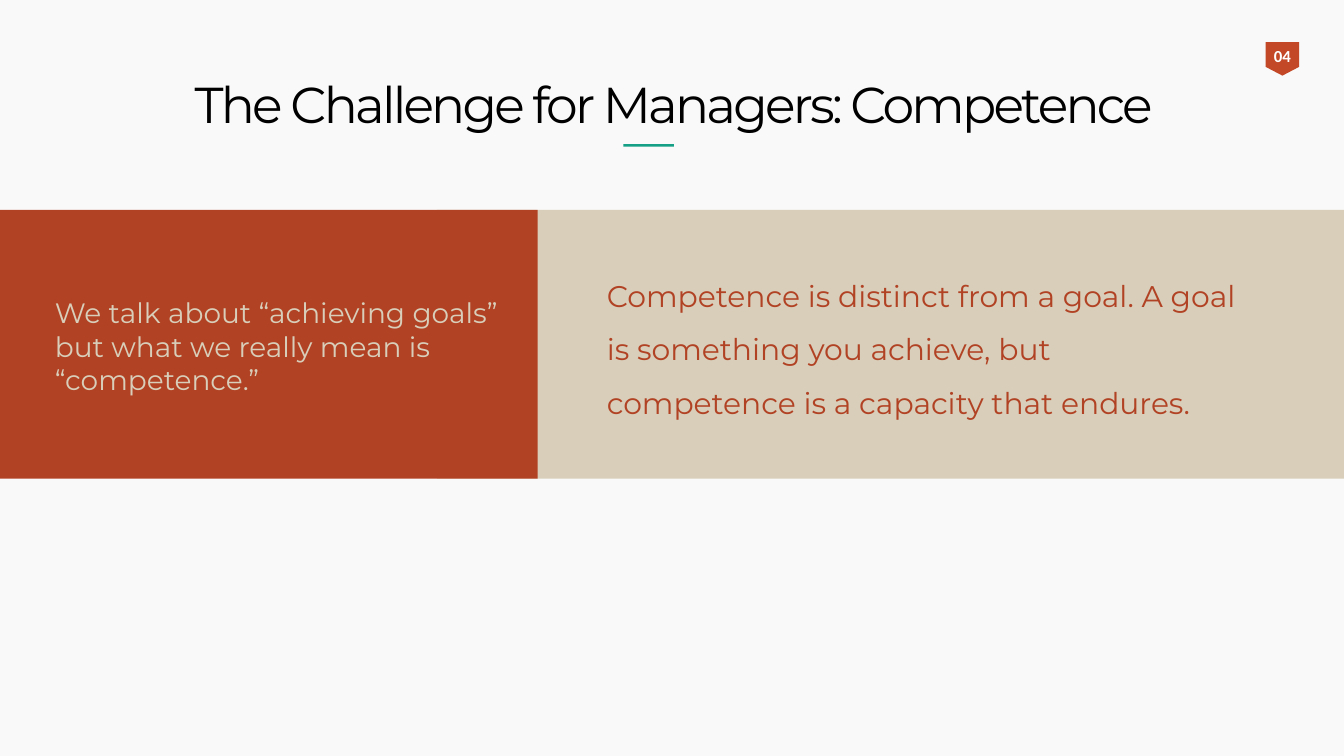
from pptx import Presentation
from pptx.dml.color import RGBColor
from pptx.enum.shapes import MSO_SHAPE
from pptx.enum.text import MSO_ANCHOR, PP_ALIGN
from pptx.util import Pt

COLORS = {
    "background": "F9F9F9",
    "sand": "D8CEB9",
    "rust": "B24224",
    "badge": "C24827",
    "teal": "16A085",
    "black": "000000",
    "white": "FFFFFF",
}


class SlideBuilder:
    """Holds the text style and the slide being filled; lengths are in points."""

    font = "Montserrat"

    def __init__(self, prs):
        self.s = prs.slides.add_slide(prs.slide_layouts[6])
        fill = self.s.background.fill
        fill.solid()
        fill.fore_color.rgb = self.color("background")

    def color(self, name):
        return RGBColor.from_string(COLORS[name])

    def shape(self, kind, left, top, width, height, color):
        sp = self.s.shapes.add_shape(kind, Pt(left), Pt(top), Pt(width), Pt(height))
        sp.shadow.inherit = False
        sp.fill.solid()
        sp.fill.fore_color.rgb = self.color(color)
        sp.line.fill.background()
        return sp

    def pentagon(self, left, top, width, height, color, point, rotation=0):
        """Add a pentagon whose tip takes the share `point` of its short side."""
        sp = self.shape(MSO_SHAPE.PENTAGON, left, top, width, height, color)
        sp.adjustments[0] = point
        sp.rotation = rotation

    def text(self, text, left, top, width, height, size, color, font=None,
             bold=False, align=PP_ALIGN.LEFT, anchor=MSO_ANCHOR.TOP,
             line_spacing=1, tracking=0, wrap=True):
        """Add a one-paragraph text box; tracking is in points."""
        sp = self.s.shapes.add_textbox(Pt(left), Pt(top), Pt(width), Pt(height))
        tf = sp.text_frame
        tf.word_wrap = wrap
        tf.vertical_anchor = anchor
        p = tf.paragraphs[0]
        p.alignment = align
        p.line_spacing = line_spacing
        r = p.add_run()
        r.text = text
        p.font.name = font or self.font
        p.font.size = Pt(size)
        p.font.bold = bold
        p.font.color.rgb = self.color(color)
        if tracking:
            r.font._element.set("spc", str(round(tracking * 100)))


def main():
    prs = Presentation()
    prs.slide_width, prs.slide_height = Pt(720), Pt(405)
    slide = SlideBuilder(prs)

    band_top, band_height = 112.5, 144
    slide.shape(MSO_SHAPE.RECTANGLE, 234, band_top, 486, band_height, "sand")
    slide.pentagon(0, band_top, 288, band_height, "rust", point=0)

    slide.text("The Challenge for Managers: Competence", 36.7, 35.3, 648, 40.3,
               27, "black", align=PP_ALIGN.CENTER, anchor=MSO_ANCHOR.MIDDLE,
               tracking=-1.5)
    slide.shape(MSO_SHAPE.RECTANGLE, 334, 77.2, 27, 1.4, "teal")

    slide.text("Competence is distinct from a goal. A goal is something you achieve, "
               "but competence is a capacity that endures.",
               318, 135.4, 354.3, 98, 16, "rust", line_spacing=1.5)
    slide.text("We talk about “achieving goals” but what we really mean is "
               "“competence.”", 22.3, 154.8, 265.7, 80, 15, "sand")

    slide.pentagon(678, 22.5, 18, 18, "badge", point=0.26, rotation=90)
    slide.text("04", 675.2, 21, 23.6, 18, 9, "white", font="Calibri", bold=True,
               align=PP_ALIGN.CENTER, wrap=False)

    prs.save("out.pptx")


if __name__ == "__main__":
    main()
